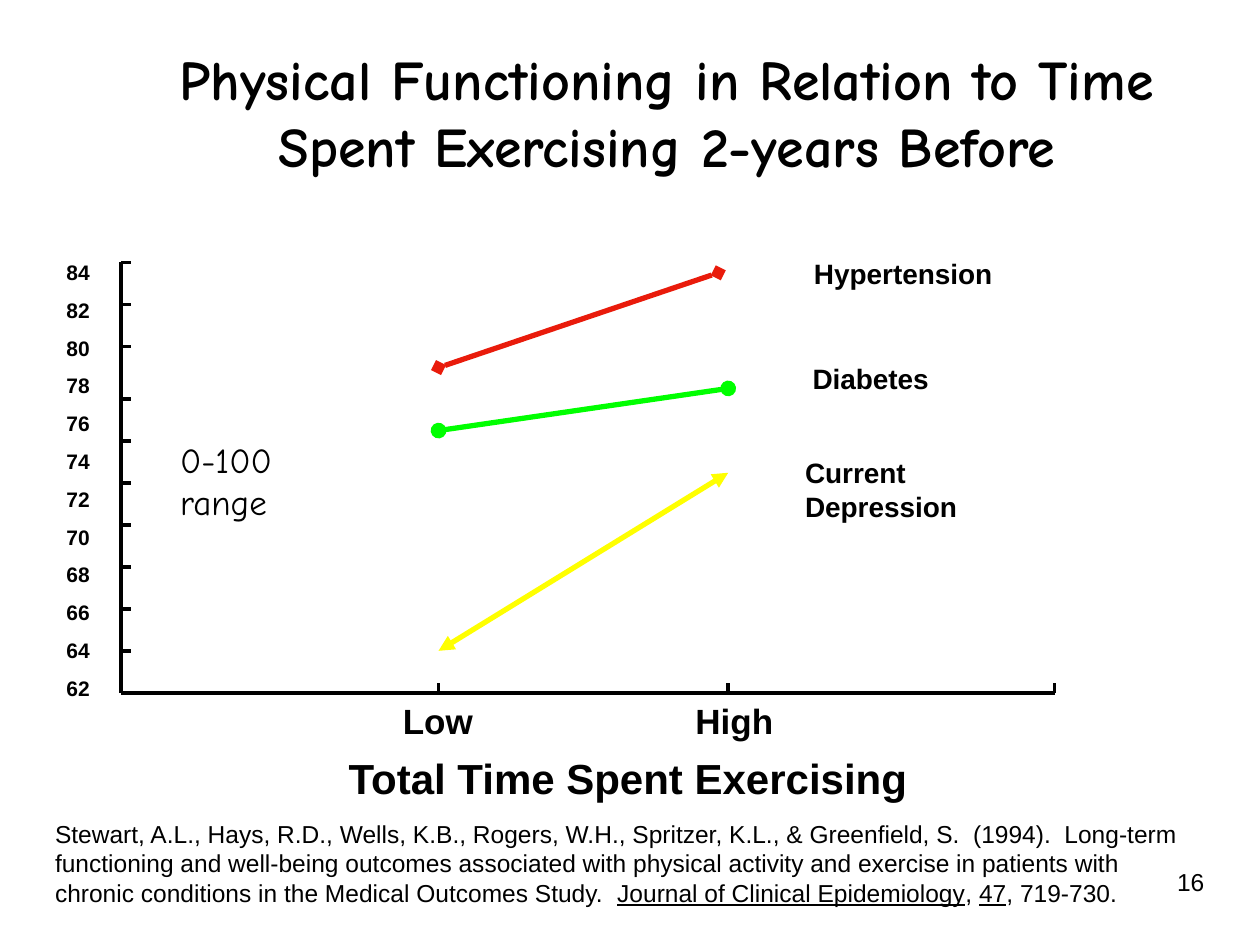
from lxml import etree
from pptx import Presentation
from pptx import util as u
from pptx.dml.color import RGBColor
from pptx.enum import shapes, text
from pptx.oxml import ns

Cm = u.Cm
COLORS = {"ink": "000000", "hypertension": "E91B0B", "diabetes": "00FF00", "depression": "FFFF00"}
LEFT, CENTER, RIGHT = text.PP_ALIGN.LEFT, text.PP_ALIGN.CENTER, text.PP_ALIGN.RIGHT


def add_text(box, content, size, bold=False, font="Arial", align=LEFT, wrap=False, spacing=1.0, inset=(0.25, 0.13)):
    tf = s.shapes.add_textbox(*[Cm(v) for v in box]).text_frame
    tf.word_wrap = wrap
    tf.margin_left = tf.margin_right = Cm(inset[0])
    tf.margin_top = tf.margin_bottom = Cm(inset[1])
    tf.text = content
    for p in tf.paragraphs:
        p.alignment = align
        p.line_spacing = spacing
        p.font.name = font
        p.font.size = u.Pt(size)
        p.font.bold = bold
        p.font.color.rgb = RGBColor.from_string(COLORS["ink"])
    return tf


def add_line(x1, y1, x2, y2, color="ink", width=2, marker=None):
    c = s.shapes.add_connector(shapes.MSO_CONNECTOR.STRAIGHT, Cm(x1), Cm(y1), Cm(x2), Cm(y2))
    c.line.color.rgb = RGBColor.from_string(COLORS[color])
    c.line.width = u.Pt(width)
    if marker:
        ln = c.line._get_or_add_ln()
        for end in ("a:headEnd", "a:tailEnd"):
            etree.SubElement(ln, ns.qn(end), type=marker)
    etree.SubElement(c._element.spPr, ns.qn("a:effectLst"))


prs = Presentation()
prs.slide_width, prs.slide_height = Cm(25.4), Cm(19.05)
s = prs.slides.add_slide(prs.slide_layouts[6])

add_text((1.5, 0.76, 23.9, 3.18), "Physical Functioning in Relation to Time\vSpent Exercising 2-years Before",
         32, True, "Comic Neue", CENTER, True)

axis_x, axis_y, axis_top, axis_end = 2.44, 13.97, 5.29, 21.26
low_x, high_x = 8.84, 14.68
tick, step = 0.21, 2.54 / 3

add_line(axis_x, axis_top, axis_x, axis_y)
add_line(axis_x, axis_y, axis_end, axis_y)
for first, count in ((axis_top, 3), (8.04, 7)):
    for i in range(count):
        y = first + i * step
        add_line(axis_x, y, axis_x + tick, y)
for x in (low_x, high_x, axis_end):
    add_line(x, axis_y, x, axis_y - tick)

add_text((1.09, 4.85, 0.99, 10.26), "\n".join(str(v) for v in range(84, 61, -2)), 12, True, spacing=1.5)
add_text((7.87, axis_y, 1.93, 1.12), "Low", 20, True)
add_text((13.77, axis_y, 2.11, 1.12), "High", 20, True)
add_text((6.78, 15.04, 11.89, 1.3), "Total Time Spent Exercising", 24, True)
add_text((3.38, 8.71, 2.97, 1.96), "0-100 range", 20, font="Comic Neue", wrap=True)

for name, y1, x2, y2, marker in (
    ("hypertension", 7.41, 14.48, 5.5, "diamond"),
    ("diabetes", 8.68, high_x, 7.83, "oval"),
    ("depression", 13.12, high_x, 9.53, "triangle"),
):
    add_line(low_x, y1, x2, y2, name, 3, marker)

for label, box, wrap in (
    ("Hypertension", (16.18, 5.08, 4.06, 0.91), False),
    ("Diabetes", (16.15, 7.19, 2.82, 0.91), False),
    ("Current Depression", (16, 9.09, 5.05, 1.6), True),
):
    add_text(box, label, 16, True, wrap=wrap, inset=(0.23, 0.1))

tf = add_text(
    (0.86, 16.38, 23.27, 2.06),
    "Stewart, A.L., Hays, R.D., Wells, K.B., Rogers, W.H., Spritzer, K.L., & Greenfield, S.  (1994).  Long-term\v"
    "functioning and well-being outcomes associated with physical activity and exercise in patients with\v"
    "chronic conditions in the Medical Outcomes Study.  ", 14)
p = tf.paragraphs[0]
for part, underline in (("Journal of Clinical Epidemiology", True), (", ", False), ("47", True), (", 719-730.", False)):
    r = p.add_run()
    r.text = part
    r.font.underline = underline

add_text((20.47, 17.35, 4.06, 1.32), "16", 14, align=RIGHT, wrap=True)

prs.save("out.pptx")
